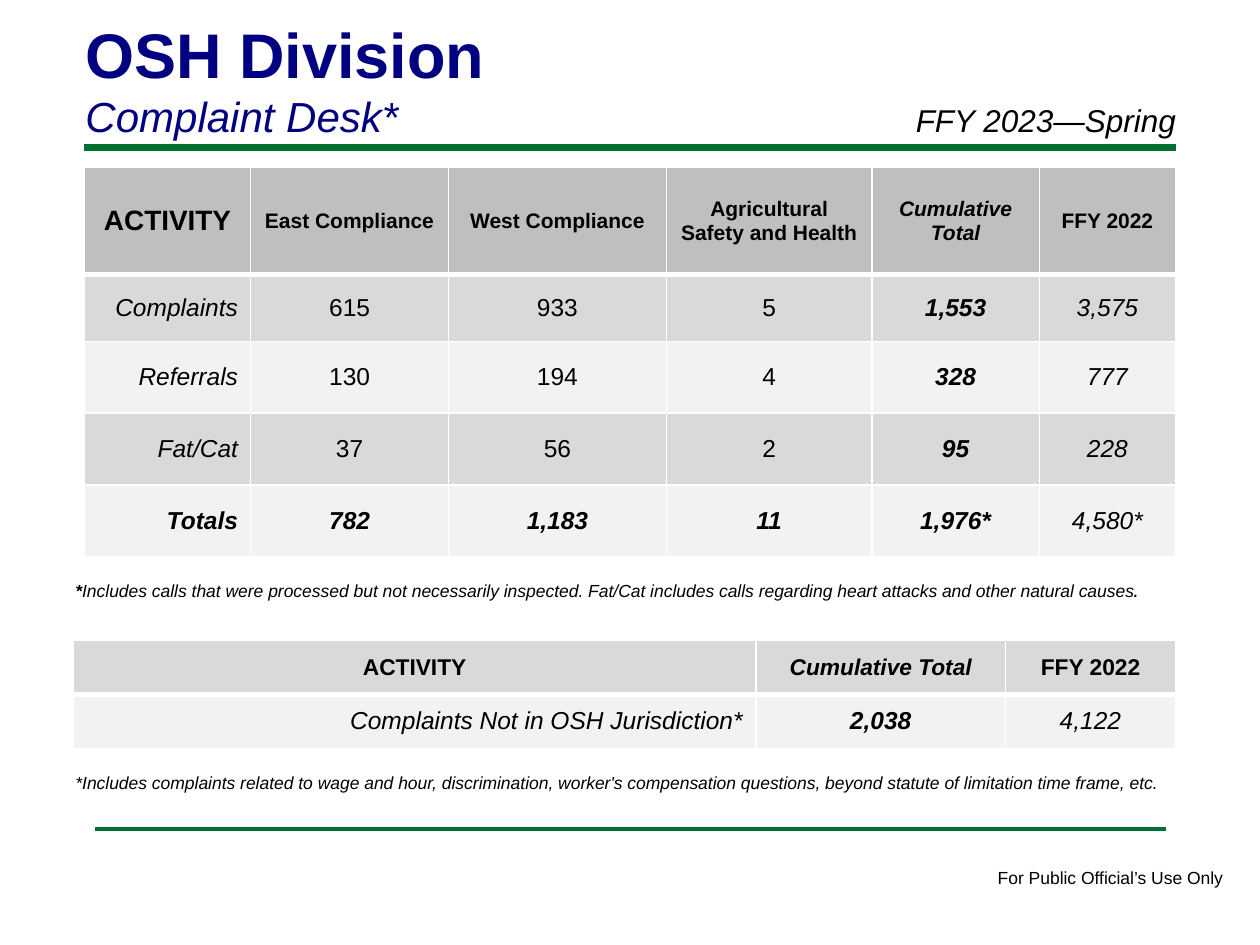
from dataclasses import dataclass

from lxml.etree import SubElement
from pptx import Presentation
from pptx.dml.color import RGBColor
from pptx.enum.shapes import MSO_CONNECTOR
from pptx.enum.text import MSO_ANCHOR, PP_ALIGN
from pptx.oxml.ns import qn
from pptx.util import Inches, Pt


@dataclass(frozen=True)
class Theme:
    font: str = "Arial"
    black: str = "000000"
    navy: str = "000080"
    green: str = "007030"
    white: str = "FFFFFF"
    header: str = "BFBFBF"
    band: str = "D9D9D9"
    light: str = "F2F2F2"
    title: int = 36
    subtitle: int = 24
    period: int = 18
    corner: int = 16
    body: int = 14
    small_header: int = 13
    header_text: int = 12
    note: int = 10


THEME = Theme()

# Content
TITLE, SUBTITLE = "OSH Division", "Complaint Desk*"
PERIOD = "FFY 2023—Spring"
FOOTER = "For Public Official’s Use Only"
CALLS_NOTE = ("Includes calls that were processed but not necessarily inspected. "
              "Fat/Cat includes calls regarding heart attacks and other natural causes")
JURISDICTION_NOTE = ("*Includes complaints related to wage and hour, discrimination, "
                     "worker's compensation questions, beyond statute of limitation "
                     "time frame, etc.")
ACTIVITY = [
    ["ACTIVITY", "East Compliance", "West Compliance",
     "Agricultural Safety and Health", "Cumulative Total", "FFY 2022"],
    ["Complaints", "615", "933", "5", "1,553", "3,575"],
    ["Referrals", "130", "194", "4", "328", "777"],
    ["Fat/Cat", "37", "56", "2", "95", "228"],
    ["Totals", "782", "1,183", "11", "1,976*", "4,580*"],
]
JURISDICTION = [
    ["ACTIVITY", "Cumulative Total", "FFY 2022"],
    ["Complaints Not in OSH Jurisdiction*", "2,038", "4,122"],
]


def add_span(para, text, size=THEME.note, color=THEME.black, bold=False, italic=False):
    span = para.add_run()
    span.text = text
    font = span.font
    font.name, font.size = THEME.font, Pt(size)
    font.bold, font.italic = bold, italic
    font.color.rgb = RGBColor.from_string(color)


def add_text(page, place, paragraphs, wrap=True, anchor=MSO_ANCHOR.TOP):
    """Each paragraph is a list of (text, format) pairs."""
    frame = page.shapes.add_textbox(*map(Inches, place)).text_frame
    frame.word_wrap, frame.vertical_anchor = wrap, anchor
    for index, spans in enumerate(paragraphs):
        para = frame.add_paragraph() if index else frame.paragraphs[0]
        for text, style in spans:
            add_span(para, text, **style)


def add_rule(page, left, right, top, weight):
    rule = page.shapes.add_connector(
        MSO_CONNECTOR.STRAIGHT, *map(Inches, (left, top, right, top)))
    rule.line.color.rgb = RGBColor.from_string(THEME.green)
    rule.line.width = Pt(weight)
    SubElement(rule._element.spPr, qn("a:effectLst"))


def set_borders(cell, **weights):
    properties = cell._tc.get_or_add_tcPr()
    for side, weight in weights.items():
        line = SubElement(properties, qn(f"a:ln{side}"), w=str(Pt(weight)))
        fill = SubElement(line, qn("a:solidFill"))
        SubElement(fill, qn("a:srgbClr"), val=THEME.white)


def add_grid(page, left, top, widths, heights, rows, header_fill,
             corner_size, header_size):
    """First row is the header; the last two columns are total and prior year."""
    table = page.shapes.add_table(
        len(rows), len(widths), Inches(left), Inches(top),
        Inches(sum(widths)), Inches(sum(heights))).table
    for column, width in zip(table.columns, widths):
        column.width = Inches(width)
    for row, height in zip(table.rows, heights):
        row.height = Inches(height)

    prior = len(widths) - 1
    total = prior - 1
    for r, values in enumerate(rows):
        is_header, is_sum = r == 0, values[0] == "Totals"
        for c, value in enumerate(values):
            if is_header:
                size = header_size if c else corner_size
                bold, italic = True, c == total
                color = header_fill
            else:
                size = THEME.body
                bold = c == total or (is_sum and c != prior)
                italic = is_sum or c in (0, total, prior)
                # The first body row continues the contrast with its header
                dark = r % 2 == (header_fill == THEME.header)
                color = THEME.band if dark else THEME.light
            cell = table.cell(r, c)
            set_borders(cell, L=1, R=1, T=3 if r == 1 else 1, B=3 if is_header else 1)
            cell.fill.solid()
            cell.fill.fore_color.rgb = RGBColor.from_string(color)
            cell.vertical_anchor = MSO_ANCHOR.MIDDLE
            para = cell.text_frame.paragraphs[0]
            right = c == 0 and not is_header
            para.alignment = PP_ALIGN.RIGHT if right else PP_ALIGN.CENTER
            add_span(para, value, size=size, bold=bold, italic=italic)


def main():
    deck = Presentation()
    deck.slide_width, deck.slide_height = Inches(10), Inches(7.5)
    page = deck.slides.add_slide(deck.slide_layouts[6])

    # Rules and footer
    add_rule(page, 0.67, 9.33, 1.17, 4)
    add_rule(page, 0.75, 9.25, 6.58, 2)
    add_text(page, (7.82, 6.83, 2.01, 0.27), [[(FOOTER, {})]], wrap=False)

    # Heading
    add_text(page, (0.58, 0.06, 8.25, 1.11), [
        [(TITLE, dict(size=THEME.title, color=THEME.navy, bold=True))],
        [(SUBTITLE, dict(size=THEME.subtitle, color=THEME.navy, italic=True))],
    ], anchor=MSO_ANCHOR.BOTTOM)
    add_text(page, (7.17, 0.75, 2.5, 0.4),
             [[(PERIOD, dict(size=THEME.period, italic=True))]])

    # Tables
    add_grid(page, 0.67, 1.33, [1.32, 1.57, 1.73, 1.63, 1.33, 1.08],
             [0.85, 0.53] + [0.57] * 3, ACTIVITY, THEME.header,
             THEME.corner, THEME.header_text)
    add_grid(page, 0.58, 5.08, [5.42, 1.98, 1.35], [0.43] * 2, JURISDICTION,
             THEME.band, THEME.small_header, THEME.small_header)

    # Notes under the tables
    add_text(page, (0.5, 4.53, 8.83, 0.5), [[
        ("*", dict(bold=True, italic=True)),
        (CALLS_NOTE, dict(italic=True)),
        (".", dict(size=THEME.header_text, italic=True)),
    ]])
    add_text(page, (0.5, 6.08, 8.92, 0.27),
             [[(JURISDICTION_NOTE, dict(italic=True))]])

    deck.save("out.pptx")


if __name__ == "__main__":
    main()
